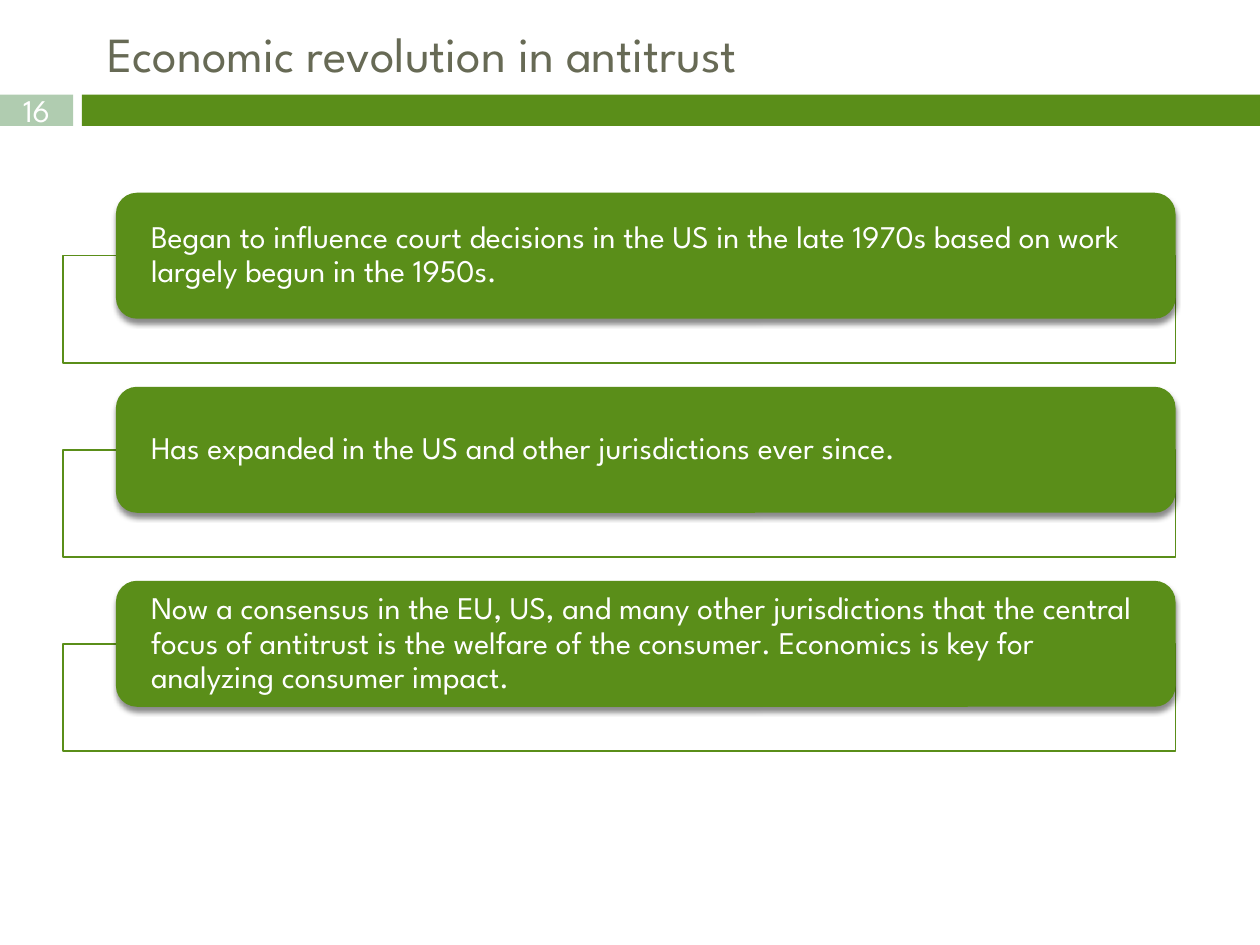
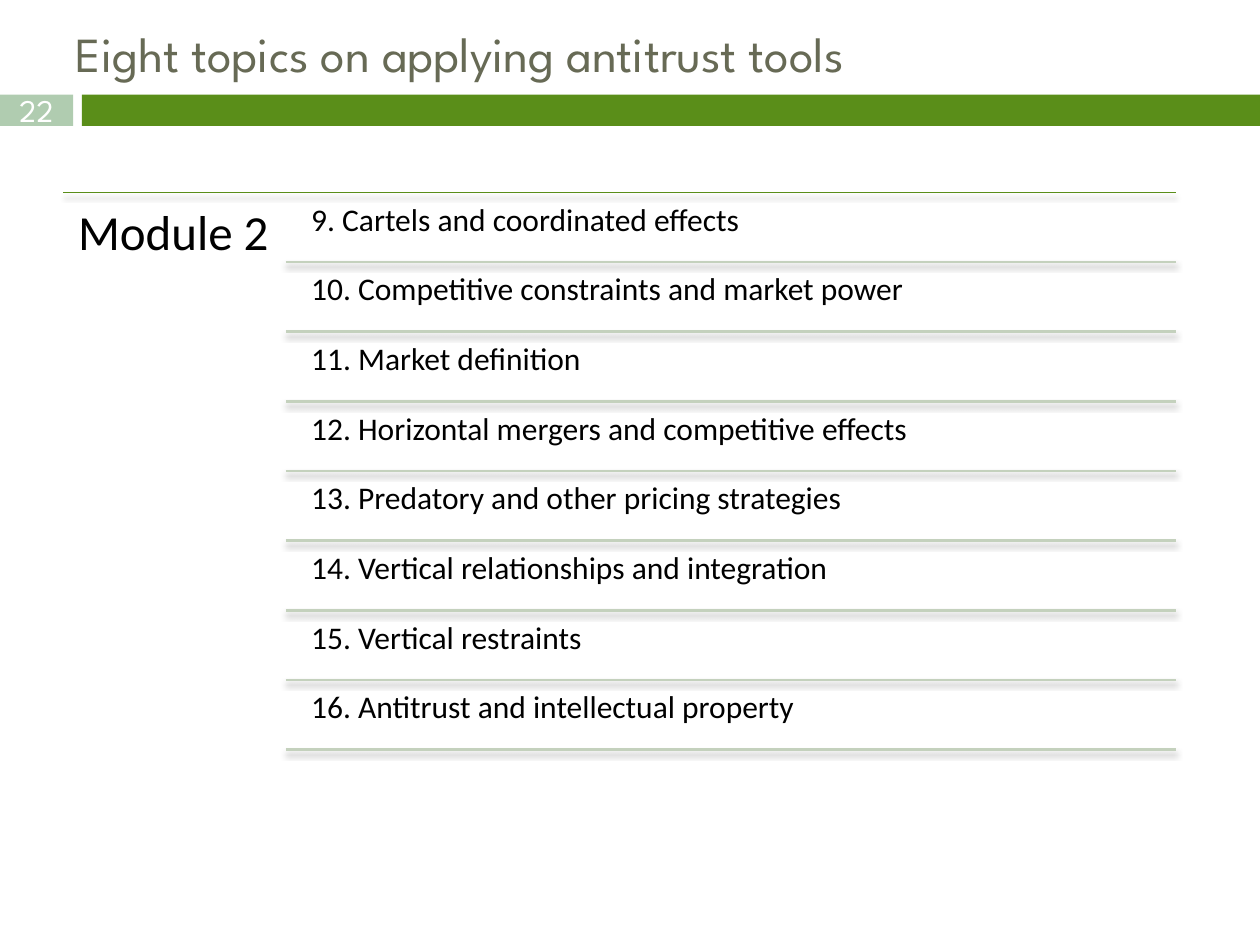
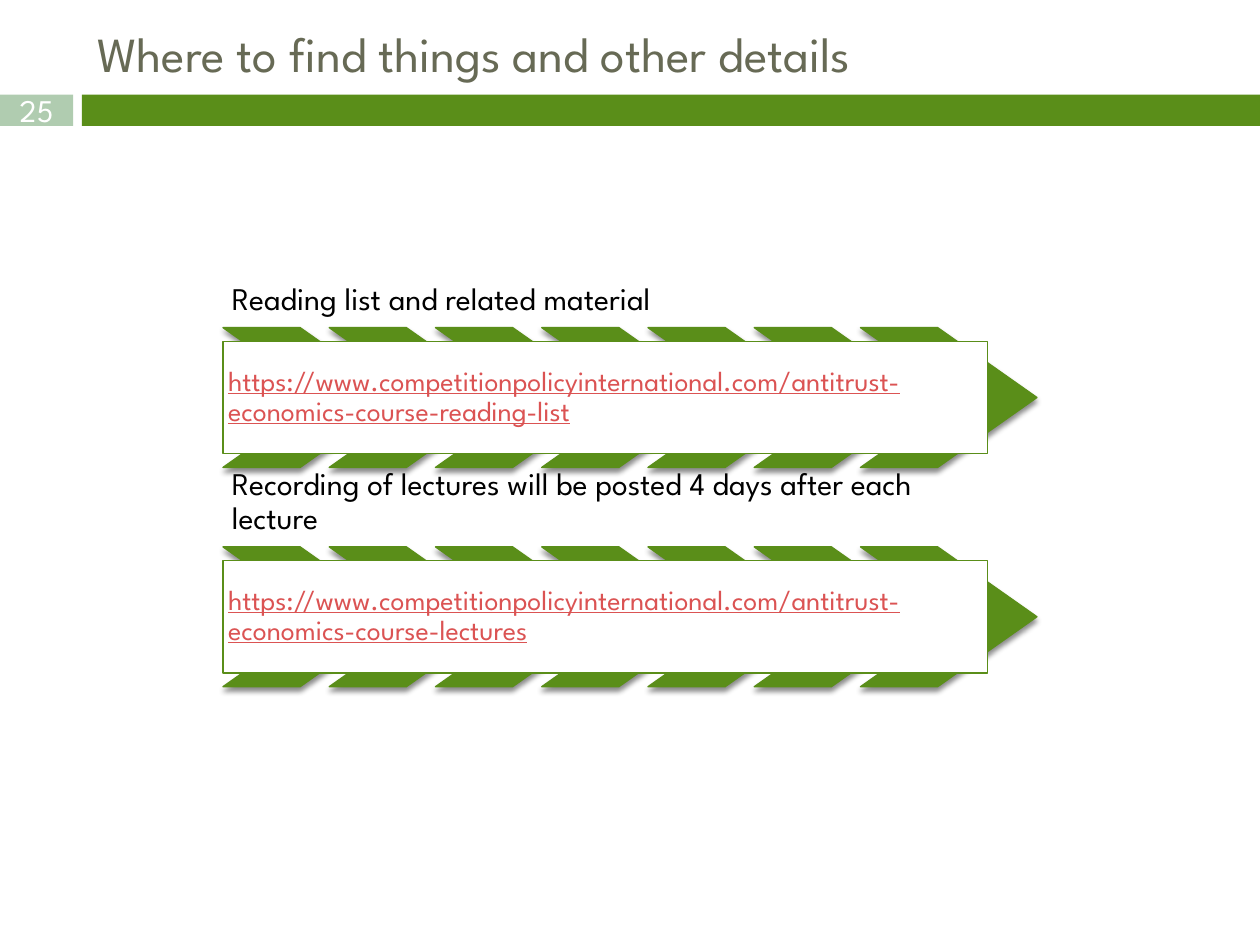
from dataclasses import dataclass

from lxml import etree
from pptx import Presentation
from pptx.dml.color import RGBColor
from pptx.enum import shapes, text
from pptx.oxml.ns import qn
from pptx.util import Inches, Pt

SHAPE = shapes.MSO_SHAPE
ANCHOR = text.MSO_ANCHOR


@dataclass(frozen=True)
class Theme:
    green: str = "5A8E19"
    mint: str = "B0CCB0"
    rule: str = "C4D1BD"
    title: str = "676A55"
    link: str = "DB5353"
    white: str = "FFFFFF"
    black: str = "000000"
    font: str = "League Spartan"
    list_font: str = "Calibri"
    heading_size: int = 28
    body_size: int = 18
    link_size: int = 16
    thin: float = 0.79
    thick: float = 1.5


T = Theme()


def rgb(color):
    return RGBColor.from_string(color)


def set_effects(sp, shadow):
    """Replace the inherited effects with a soft drop shadow or with none."""
    effects = etree.SubElement(sp._element.spPr, qn("a:effectLst"))
    if shadow:
        outer = etree.SubElement(
            effects, qn("a:outerShdw"), blurRad=str(Pt(3)), dist=str(Pt(2.4)),
            dir=str(90 * 60000), algn="ctr", rotWithShape="0")
        color = etree.SubElement(outer, qn("a:srgbClr"), val=T.black)
        etree.SubElement(color, qn("a:alpha"), val="45000")


def set_text(sp, content, size=T.body_size, color=T.black, font=T.font, inset=0.0,
             inset_y=None, anchor=ANCHOR.MIDDLE, align=text.PP_ALIGN.LEFT,
             spacing=0.9, underline=False):
    tf = sp.text_frame
    tf.text = content
    tf.word_wrap = True
    tf.auto_size = text.MSO_AUTO_SIZE.NONE
    tf.vertical_anchor = anchor
    tf.margin_left = tf.margin_right = Inches(inset)
    tf.margin_top = tf.margin_bottom = Inches(inset if inset_y is None else inset_y)
    p = tf.paragraphs[0]
    p.alignment = align
    p.line_spacing = spacing
    r = p.runs[0]
    r.font.size = Pt(size)
    r.font.name = font
    r.font.color.rgb = rgb(color)
    if underline:
        r.font.underline = True


def add_block(s, kind, x, y, w, h, fill, line=None, shadow=False):
    sp = s.shapes.add_shape(kind, Inches(x), Inches(y), Inches(w), Inches(h))
    sp.fill.solid()
    sp.fill.fore_color.rgb = rgb(fill)
    if line:
        sp.line.color.rgb = rgb(line)
        sp.line.width = Pt(T.thin)
    else:
        sp.line.fill.background()
    set_effects(sp, shadow)
    return sp


def add_label(s, x, y, w, h, content, **style):
    sp = s.shapes.add_textbox(Inches(x), Inches(y), Inches(w), Inches(h))
    set_text(sp, content, **style)


def add_rule(s, x, y, right, color, width):
    line = s.shapes.add_connector(shapes.MSO_CONNECTOR.STRAIGHT, Inches(x), Inches(y),
                                  Inches(right), Inches(y))
    line.line.color.rgb = rgb(color)
    line.line.width = Pt(width)
    set_effects(line, shadow=True)


def add_slide(prs, title, number, x, w):
    """Add a slide with the shared number tab, green band and title."""
    s = prs.slides.add_slide(prs.slide_layouts[5])
    tab = add_block(s, SHAPE.RECTANGLE, 0, 0.75, 0.58, 0.25, T.mint)
    set_text(tab, number, color=T.white, align=text.PP_ALIGN.CENTER, spacing=1.0)
    add_block(s, SHAPE.RECTANGLE, 0.65, 0.75, 9.35, 0.25, T.green)
    heading = s.shapes.title
    heading.left, heading.top = Inches(x), Inches(0.17)
    heading.width, heading.height = Inches(w), Inches(0.5)
    set_text(heading, title, size=T.heading_size, color=T.title, inset=0.1,
             inset_y=0.05, spacing=1.0)
    return s


def add_statement(s, y, content):
    """Add a rounded card in front of an outlined frame."""
    add_block(s, SHAPE.RECTANGLE, 0.5, y + 0.5, 8.83, 0.85, T.white, line=T.green)
    card = add_block(s, SHAPE.ROUNDED_RECTANGLE, 0.92, y, 8.41, 1, T.green, shadow=True)
    set_text(card, content, color=T.white, inset=0.23, inset_y=0)


def add_topics(s, module, topics):
    left, right, top = 0.5, 9.33, 1.53
    topic_left, row_height = 2.27, 0.53
    pitch = (5.42 - 1.55) / (len(topics) - 1)
    add_rule(s, left, top, right, T.green, T.thin)
    add_label(s, left, top, topic_left - left, 4.44, module, size=T.heading_size,
              font=T.list_font, inset=0.12, anchor=ANCHOR.TOP)
    for i, topic in enumerate(topics):
        y = top + 0.02 + i * pitch
        add_label(s, 2.4, y, 6.93, row_height, topic, font=T.list_font, inset=0.07,
                  anchor=ANCHOR.TOP)
        add_rule(s, topic_left, y + row_height, right, T.rule, T.thick)


def add_link_arrow(s, y, label, address):
    """Add a label over a chevron strip that carries a web address."""
    left, count = 1.77, 7
    pitch = (6.83 - left) / (count - 1)
    add_label(s, left, y, 5.99, 0.54, label, inset=0.07, anchor=ANCHOR.BOTTOM)
    for i in range(count):
        chevron = add_block(s, SHAPE.CHEVRON, left + i * pitch, y + 0.55, 1.4, 1.11,
                            T.green, line=T.green, shadow=True)
        chevron.adjustments[0] = 0.71
    box = add_block(s, SHAPE.RECTANGLE, left, y + 0.66, 6.07, 0.89, T.white, line=T.green)
    set_text(box, address, size=T.link_size, color=T.link, inset=0.04, underline=True)


def main():
    prs = Presentation()
    prs.slide_width, prs.slide_height = Inches(10), Inches(7.5)

    s = add_slide(prs, "Economic revolution in antitrust", "16", 0.75, 8.92)
    statements = [
        "Began to influence court decisions in the US in the late 1970s based on work "
        "largely begun in the 1950s.",
        "Has expanded in the US and other jurisdictions ever since.",
        "Now a consensus in the EU, US, and many other jurisdictions that the central "
        "focus of antitrust is the welfare of the consumer. Economics is key for "
        "analyzing consumer impact.",
    ]
    for i, statement in enumerate(statements):
        add_statement(s, 1.53 + i * 1.54, statement)

    s = add_slide(prs, "Eight topics on applying antitrust tools", "22", 0.5, 9.25)
    add_topics(s, "Module 2", [
        "9. Cartels and coordinated effects",
        "10. Competitive constraints and market power",
        "11. Market definition",
        "12. Horizontal mergers and competitive effects",
        "13. Predatory and other pricing strategies",
        "14. Vertical relationships and integration",
        "15. Vertical restraints",
        "16. Antitrust and intellectual property",
    ])

    s = add_slide(prs, "Where to find things and other details", "25", 0.67, 8.92)
    site = "https://www.competitionpolicyinternational.com/"
    add_link_arrow(s, 2.05, "Reading list and related material",
                   site + "antitrust-economics-course-reading-list")
    add_link_arrow(s, 3.79, "Recording of lectures will be posted 4 days after each lecture",
                   site + "antitrust-economics-course-lectures")

    prs.save("out.pptx")


if __name__ == "__main__":
    main()
